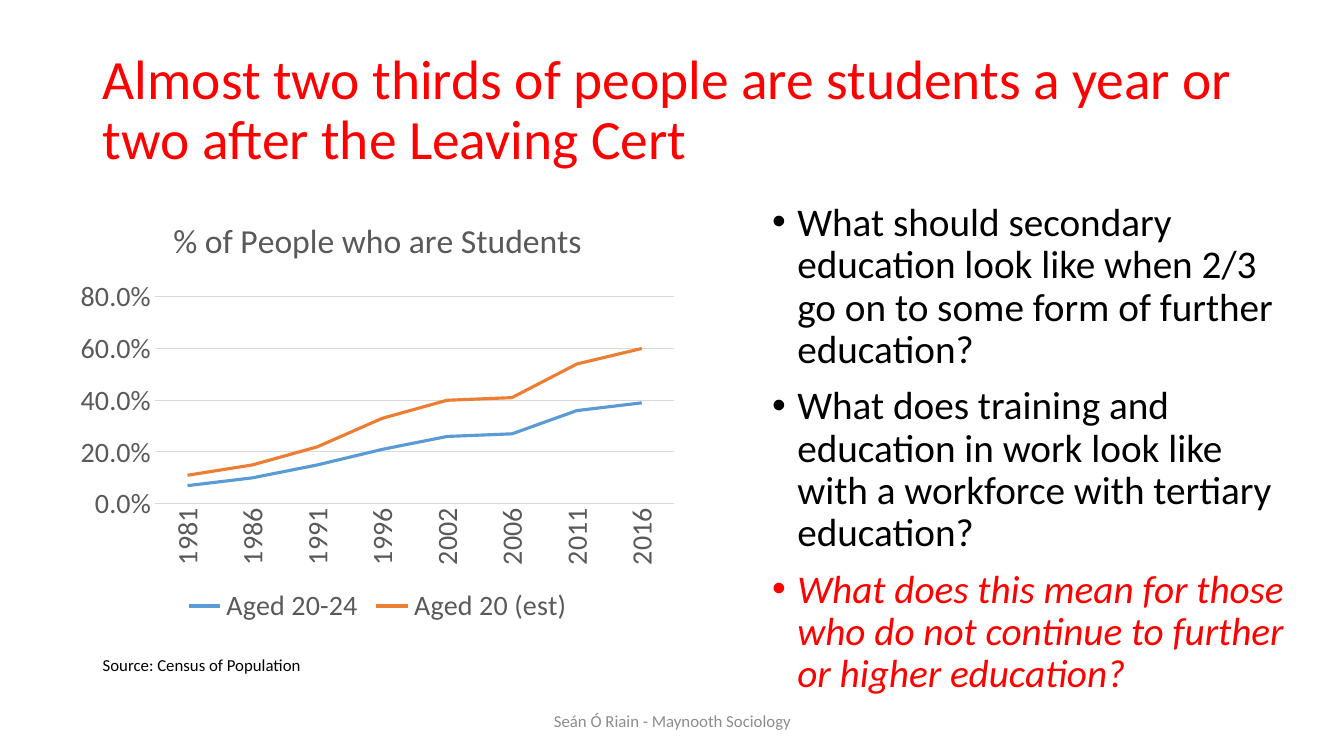
from dataclasses import dataclass

from lxml import etree
from pptx import Presentation
from pptx.chart.data import CategoryChartData
from pptx.dml.color import RGBColor
from pptx.enum.chart import XL_CHART_TYPE, XL_LEGEND_POSITION, XL_TICK_MARK
from pptx.enum.text import MSO_ANCHOR, MSO_AUTO_SIZE, PP_ALIGN
from pptx.oxml import parse_xml
from pptx.oxml.ns import nsdecls, qn
from pptx.util import Inches, Pt

TITLE = "Almost two thirds of people are students a year or two after the Leaving Cert"
QUESTIONS = [  # text, emphasised
    ("What should secondary education look like when 2/3 go on to some form of further education?", False),
    ("What does training and education in work look like with a workforce with tertiary education?", False),
    ("What does this mean for those who do not continue to further or higher education?", True),
]
SOURCE = "Source: Census of Population"
FOOTER = "Seán Ó Riain - Maynooth Sociology"
CHART_TITLE = "% of People who are Students"
YEARS = ["1981", "1986", "1991", "1996", "2002", "2006", "2011", "2016"]
STUDENT_SHARES = {
    "Aged 20-24": (0.07, 0.1, 0.15, 0.21, 0.26, 0.27, 0.36, 0.39),
    "Aged 20 (est)": (0.11, 0.15, 0.22, 0.33, 0.4, 0.41, 0.54, 0.6),
}

SLIDE_WIDTH, SLIDE_HEIGHT = Inches(13.33), Inches(7.5)
# Left, top, width, height in percent of the slide
LEFT_EDGE, CONTENT_TOP = 6.9, 26.13
TITLE_BOX = (LEFT_EDGE, 5.33, 88.37, 18.93)
QUESTIONS_BOX = (56.71, CONTENT_TOP, 39.91, 68.93)
CHART_BOX = (5.1, CONTENT_TOP, 45.99, 57.07)
FOOTER_BOX = (33.16, 92.67, 33.76, 5.33)
SOURCE_BOX = (LEFT_EDGE, 86, 25.06, 4)
# Shares of the chart frame
PLOT_AREA = {"x": 0.14, "y": 0.23, "w": 0.84, "h": 0.48}
BULLET_INDENT = Inches(0.25)


@dataclass(frozen=True)
class Theme:
    font: str = "Calibri"
    text: str = "000000"
    accent: str = "FF0000"
    chart_text: str = "595959"
    grid: str = "D9D9D9"
    footer: str = "8C8C8C"
    series: tuple = ("5B9BD5", "ED7D31")
    title_size: float = 39.6
    body_size: float = 28
    chart_title_size: float = 24
    chart_size: float = 20
    small_size: float = 12


THEME = Theme()


def place(box):
    left, top, width, height = (share / 100 for share in box)
    return (round(left * SLIDE_WIDTH), round(top * SLIDE_HEIGHT),
            round(width * SLIDE_WIDTH), round(height * SLIDE_HEIGHT))


def style_font(font, size, color, italic=False):
    font.name = THEME.font
    font.size = Pt(size)
    font.bold = False
    font.italic = italic
    font.color.rgb = RGBColor.from_string(color)


def style_line(line, color, width):
    line.color.rgb = RGBColor.from_string(color)
    line.width = Pt(width)


def write(paragraph, text, size, color, italic=False):
    run = paragraph.add_run()
    run.text = text
    style_font(run.font, size, color, italic)


def add_text_box(slide, box):
    text_frame = slide.shapes.add_textbox(*place(box)).text_frame
    text_frame.word_wrap = True
    return text_frame


def add_bullet(paragraph):
    properties = paragraph._p.get_or_add_pPr()
    properties.set("marL", str(BULLET_INDENT))
    properties.set("indent", str(-BULLET_INDENT))
    etree.SubElement(properties, qn("a:buFont")).set("typeface", "Arial")
    etree.SubElement(properties, qn("a:buChar")).set("char", "•")


def add_title(slide):
    title = slide.shapes.title
    title.left, title.top, title.width, title.height = place(TITLE_BOX)
    text_frame = title.text_frame
    text_frame.auto_size = MSO_AUTO_SIZE.NONE
    text_frame.vertical_anchor = MSO_ANCHOR.MIDDLE
    paragraph = text_frame.paragraphs[0]
    paragraph.alignment = PP_ALIGN.LEFT
    paragraph.line_spacing = 0.9
    write(paragraph, TITLE, THEME.title_size, THEME.accent)


def add_questions(slide):
    text_frame = add_text_box(slide, QUESTIONS_BOX)
    for index, (question, emphasised) in enumerate(QUESTIONS):
        paragraph = text_frame.add_paragraph() if index else text_frame.paragraphs[0]
        paragraph.line_spacing = 0.9
        paragraph.space_before = Pt(10)
        add_bullet(paragraph)
        color = THEME.accent if emphasised else THEME.text
        write(paragraph, question, THEME.body_size, color, emphasised)


def fix_plot_area(chart):
    """Give the inner plot area a set place in the chart frame."""
    plot_area = chart._chartSpace.chart.plotArea
    for automatic in plot_area.findall(qn("c:layout")):
        plot_area.remove(automatic)
    places = "".join(f'<c:{key} val="{share}"/>' for key, share in PLOT_AREA.items())
    plot_area.insert(0, parse_xml(
        f'<c:layout {nsdecls("c")}><c:manualLayout><c:layoutTarget val="inner"/>'
        f'<c:xMode val="edge"/><c:yMode val="edge"/>{places}</c:manualLayout></c:layout>'))


def add_student_chart(slide):
    data = CategoryChartData(number_format="0.0%")
    data.categories = YEARS
    for name, shares in STUDENT_SHARES.items():
        data.add_series(name, shares)
    chart = slide.shapes.add_chart(XL_CHART_TYPE.LINE, *place(CHART_BOX), data).chart
    style_font(chart.font, THEME.chart_size, THEME.chart_text)
    write(chart.chart_title.text_frame.paragraphs[0], CHART_TITLE,
          THEME.chart_title_size, THEME.chart_text)
    chart.chart_title.include_in_layout = False

    chart.has_legend = True
    chart.legend.position = XL_LEGEND_POSITION.BOTTOM
    chart.legend.include_in_layout = False
    style_font(chart.legend.font, THEME.chart_size, THEME.chart_text)

    years, values = chart.category_axis, chart.value_axis
    for axis in (years, values):
        axis.major_tick_mark = axis.minor_tick_mark = XL_TICK_MARK.NONE
        style_font(axis.tick_labels.font, THEME.chart_size, THEME.chart_text)
    style_line(years.format.line, THEME.grid, 0.75)
    upright = years._element.find(qn("c:txPr")).find(qn("a:bodyPr"))
    upright.set("rot", "-5400000")
    upright.set("vert", "horz")
    values.minimum_scale, values.maximum_scale, values.major_unit = 0, 0.8, 0.2
    values.tick_labels.number_format = "0.0%"
    values.tick_labels.number_format_is_linked = False
    values.format.line.fill.background()
    style_line(values.major_gridlines.format.line, THEME.grid, 0.75)

    plot = chart.plots[0]
    plot.vary_by_categories = False
    for series, color in zip(plot.series, THEME.series):
        series.smooth = False
        style_line(series.format.line, color, 2.25)
    fix_plot_area(chart)


def add_notes_below(slide):
    footer = add_text_box(slide, FOOTER_BOX)
    footer.vertical_anchor = MSO_ANCHOR.MIDDLE
    footer.paragraphs[0].alignment = PP_ALIGN.CENTER
    write(footer.paragraphs[0], FOOTER, THEME.small_size, THEME.footer)
    source = add_text_box(slide, SOURCE_BOX)
    source.auto_size = MSO_AUTO_SIZE.SHAPE_TO_FIT_TEXT
    write(source.paragraphs[0], SOURCE, THEME.small_size, THEME.text)


def main():
    presentation = Presentation()
    presentation.slide_width, presentation.slide_height = SLIDE_WIDTH, SLIDE_HEIGHT
    title_only = presentation.slide_layouts.get_by_name("Title Only")
    slide = presentation.slides.add_slide(title_only)
    add_title(slide)
    add_questions(slide)
    add_student_chart(slide)
    add_notes_below(slide)
    presentation.save("out.pptx")


if __name__ == "__main__":
    main()
